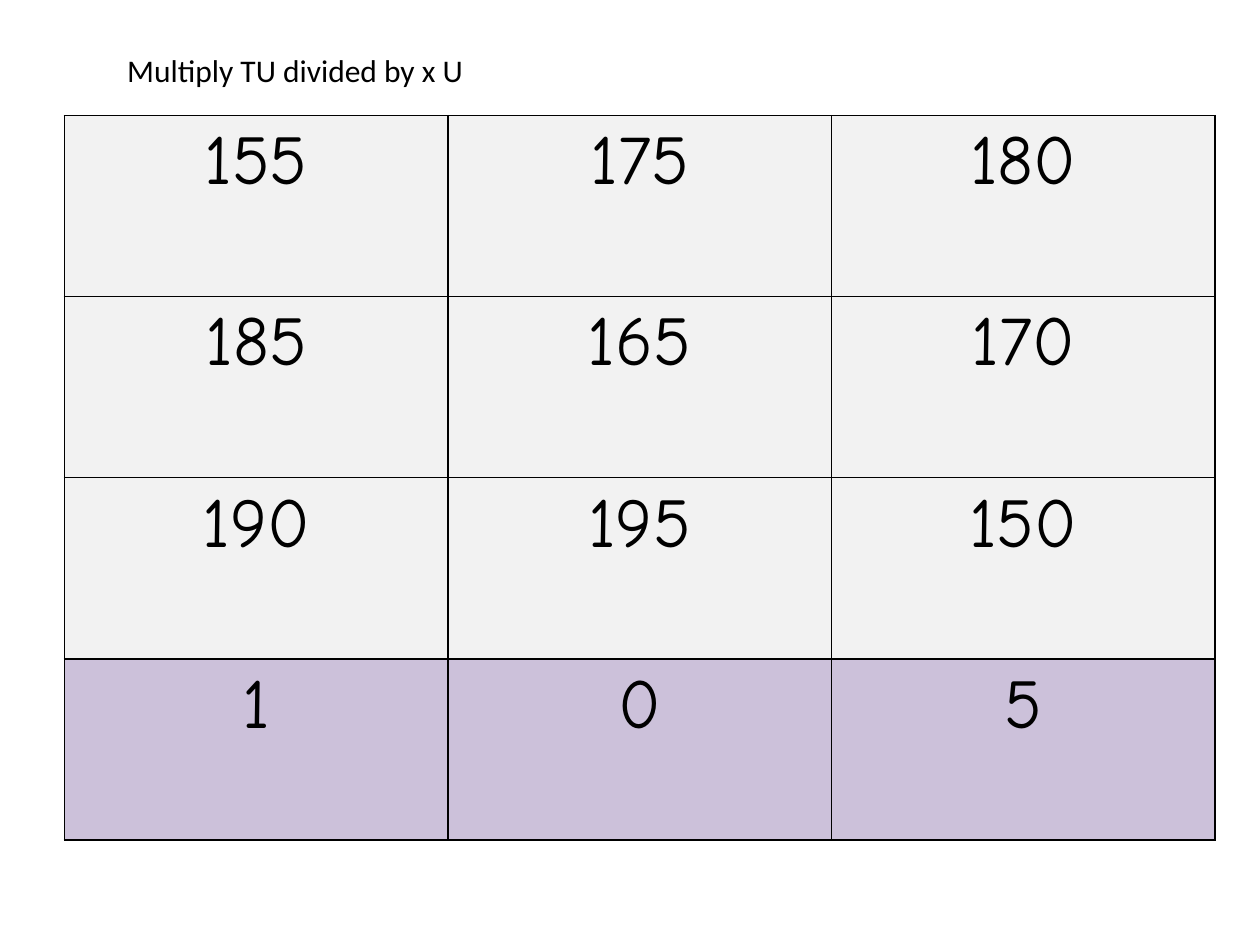
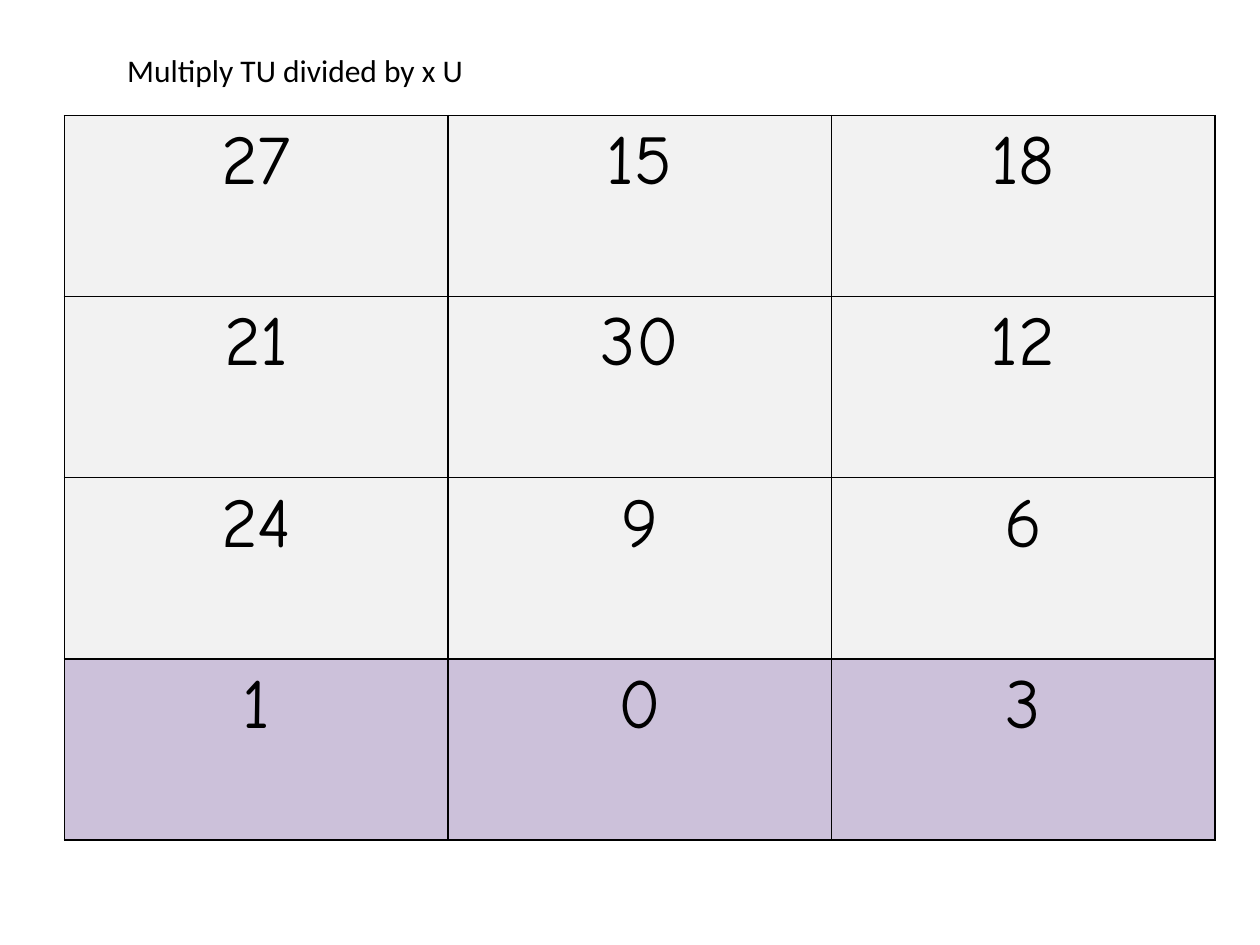
"""Build two number-grid slides for a multiplication and division exercise."""
from lxml import etree
from pptx import Presentation
from pptx.dml.color import RGBColor
from pptx.enum import text as txt
from pptx.oxml import ns
from pptx.util import Cm, Pt

HEADING = "Multiply TU divided by x U"
GRIDS = [
    [
        ["155", "175", "180"],
        ["185", "165", "170"],
        ["190", "195", "150"],
        ["1", "0", "5"],
    ],
    [
        ["27", "15", "18"],
        ["21", "30", "12"],
        ["24", "9", "6"],
        ["1", "0", "3"],
    ],
]
COLOURS = {"ink": "000000", "number": "F2F2F2", "answer": "CCC1DA"}
HEADING_BOX = (Cm(2.31), Cm(0.91), Cm(7.7), Cm(1.03))
GRID_LEFT, GRID_TOP = Cm(1.3), Cm(2.33)
COLUMN_WIDTH, ROW_HEIGHT = Cm(7.73), Cm(3.65)
BORDER_WIDTH = Pt(1)
TITLE_ONLY = 5


def write(frame, words, font, size, align, colour="ink"):
    frame.text = words
    paragraph = frame.paragraphs[0]
    paragraph.alignment = align
    run_font = paragraph.runs[0].font
    run_font.name = font
    run_font.size = Pt(size)
    run_font.color.rgb = RGBColor.from_string(COLOURS[colour])


def add_borders(cell):
    properties = cell._tc.get_or_add_tcPr()
    for position, side in enumerate(("lnL", "lnR", "lnT", "lnB")):
        border = etree.Element(ns.qn(f"a:{side}"), w=str(BORDER_WIDTH))
        fill = etree.SubElement(border, ns.qn("a:solidFill"))
        etree.SubElement(fill, ns.qn("a:srgbClr"), val=COLOURS["ink"])
        properties.insert(position, border)


def add_grid(slide, numbers):
    rows, columns = len(numbers), len(numbers[0])
    grid = slide.shapes.add_table(
        rows, columns, GRID_LEFT, GRID_TOP,
        COLUMN_WIDTH * columns, ROW_HEIGHT * rows,
    ).table
    grid.first_row = grid.horz_banding = False
    for row_index, row in enumerate(numbers):
        shade = "answer" if row_index == rows - 1 else "number"
        for column_index, number in enumerate(row):
            cell = grid.cell(row_index, column_index)
            cell.fill.solid()
            cell.fill.fore_color.rgb = RGBColor.from_string(COLOURS[shade])
            add_borders(cell)
            write(cell.text_frame, number, font="Comic Neue", size=40,
                  align=txt.PP_ALIGN.CENTER)


def add_heading(slide):
    heading = slide.shapes.title
    heading.left, heading.top, heading.width, heading.height = HEADING_BOX
    frame = heading.text_frame
    frame.word_wrap = False
    frame.auto_size = txt.MSO_AUTO_SIZE.SHAPE_TO_FIT_TEXT
    frame.vertical_anchor = txt.MSO_ANCHOR.TOP
    write(frame, HEADING, font="Calibri", size=18, align=txt.PP_ALIGN.LEFT)


def main():
    deck = Presentation()
    deck.slide_width, deck.slide_height = Cm(25.4), Cm(19.05)
    for numbers in GRIDS:
        slide = deck.slides.add_slide(deck.slide_layouts[TITLE_ONLY])
        add_heading(slide)
        add_grid(slide, numbers)
    deck.save("out.pptx")


if __name__ == "__main__":
    main()
